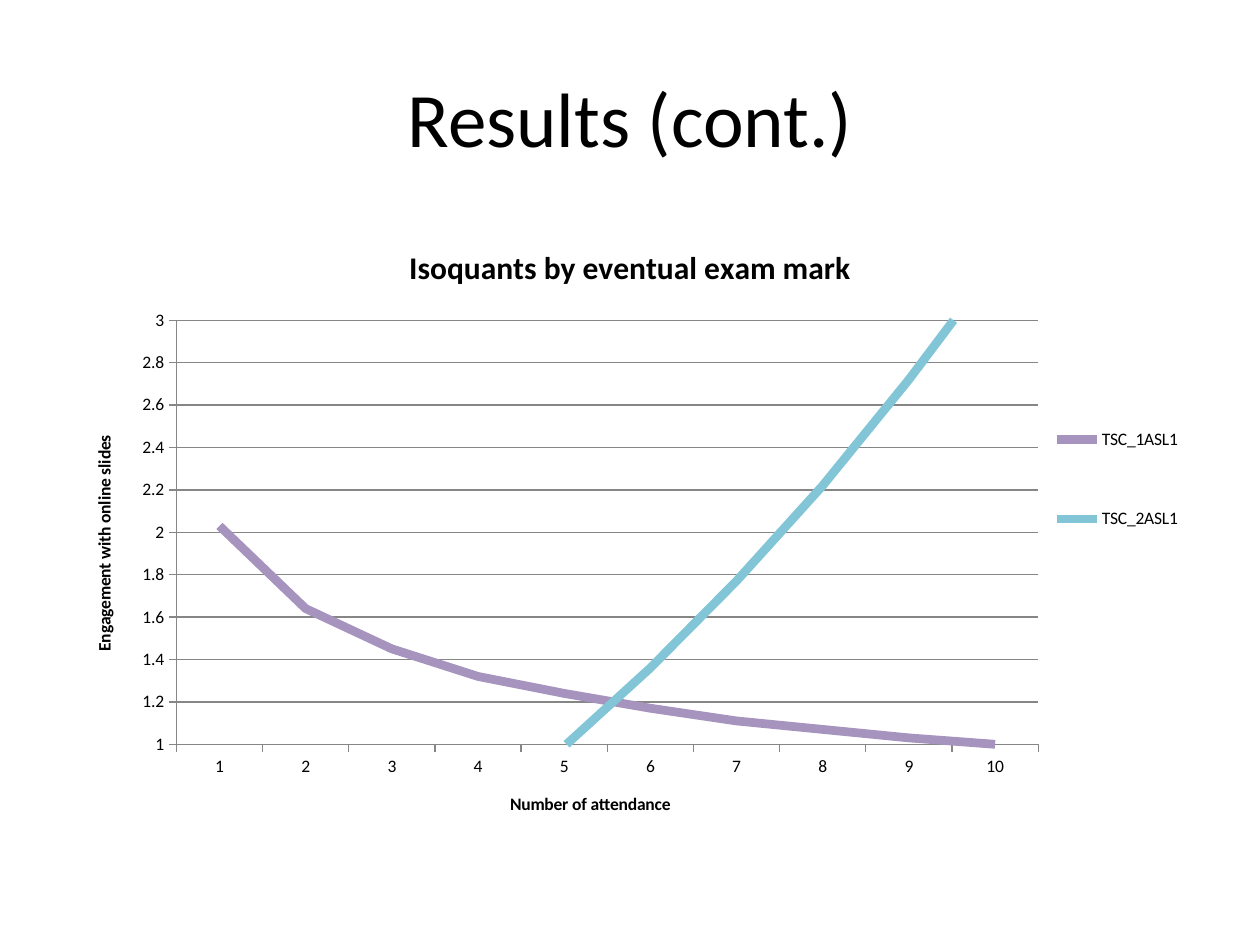
import dataclasses

import pptx
import pptx.chart.data
import pptx.dml.color
import pptx.enum.chart
import pptx.enum.dml
import pptx.enum.text
import pptx.oxml
import pptx.oxml.ns
import pptx.util

Pt = pptx.util.Pt
CHART = pptx.enum.chart
ACCENT = pptx.enum.dml.MSO_THEME_COLOR


@dataclasses.dataclass(frozen=True)
class Theme:
    font: str = "Calibri"
    text: str = "000000"
    axis: str = "868686"
    series: tuple = (ACCENT.ACCENT_4, ACCENT.ACCENT_5)
    series_brightness: float = 0.3
    title_size: int = 44
    chart_title_size: int = 18
    label_size: int = 10
    series_width: float = 5
    axis_width: float = 0.75


THEME = Theme()
SERIES = {
    "TSC_1ASL1": (2.03, 1.64, 1.45, 1.32, 1.24, 1.17, 1.11, 1.07, 1.03, 1),
    "TSC_2ASL1": (0.06, 0.21, 0.41, 0.68, 0.99, 1.36, 1.77, 2.22, 2.72, 3.26),
}


def style_font(font, size, bold=False):
    font.name = THEME.font
    font.size = Pt(size)
    font.bold = bold
    font.color.rgb = pptx.dml.color.RGBColor.from_string(THEME.text)


def style_line(line):
    line.color.rgb = pptx.dml.color.RGBColor.from_string(THEME.axis)
    line.width = Pt(THEME.axis_width)


def set_title(owner, text, size):
    """Give a chart or an axis a bold title."""
    frame = (owner.chart_title if hasattr(owner, "chart_title") else owner.axis_title).text_frame
    frame.text = text
    style_font(frame.paragraphs[0].font, size, bold=True)


def set_layout(element, x, y, w, h, inner=False):
    """Place a plot area or legend by fractions of the chart's box."""
    qn = pptx.oxml.ns.qn
    for old in element.findall(qn("c:layout")):
        element.remove(old)
    target = '<c:layoutTarget val="inner"/>' if inner else ""
    modes = '<c:xMode val="edge"/><c:yMode val="edge"/>'
    sizes = "".join(f'<c:{key} val="{value}"/>' for key, value in zip("xywh", (x, y, w, h)))
    layout = pptx.oxml.parse_xml(
        f'<c:layout {pptx.oxml.ns.nsdecls("c")}><c:manualLayout>'
        f"{target}{modes}{sizes}</c:manualLayout></c:layout>"
    )
    position = element.find(qn("c:legendPos"))
    if position is None:
        element.insert(0, layout)
    else:
        position.addnext(layout)


def place_title(page, left, top, width, height, text):
    box = page.shapes.title
    box.left, box.top, box.width, box.height = map(Pt, (left, top, width, height))
    frame = box.text_frame
    frame.text = text
    frame.vertical_anchor = pptx.enum.text.MSO_ANCHOR.MIDDLE
    para = frame.paragraphs[0]
    para.alignment = pptx.enum.text.PP_ALIGN.CENTER
    style_font(para.font, THEME.title_size)


def style_axis(axis, title):
    set_title(axis, title, THEME.label_size)
    axis.major_tick_mark = CHART.XL_TICK_MARK.OUTSIDE
    axis.minor_tick_mark = CHART.XL_TICK_MARK.NONE
    style_font(axis.tick_labels.font, THEME.label_size)
    style_line(axis.format.line)


def place_chart(page, left, top, width, height):
    data = pptx.chart.data.CategoryChartData()
    data.categories = [str(number) for number in range(1, 11)]
    for name, values in SERIES.items():
        data.add_series(name, values)
    chart = page.shapes.add_chart(
        CHART.XL_CHART_TYPE.LINE, *map(Pt, (left, top, width, height)), data
    ).chart
    style_font(chart.font, THEME.label_size)
    set_title(chart, "Isoquants by eventual exam mark", THEME.chart_title_size)

    style_axis(chart.category_axis, "Number of attendance")
    value_axis = chart.value_axis
    style_axis(value_axis, "Engagement with online slides")
    value_axis.minimum_scale, value_axis.maximum_scale = 1, 3
    value_axis.major_unit = 0.2
    value_axis.tick_labels.number_format = "General"
    value_axis.tick_labels.number_format_is_linked = False
    value_axis.has_major_gridlines = True
    style_line(value_axis.major_gridlines.format.line)

    plot = chart.plots[0]
    plot.vary_by_categories = False
    for series, color in zip(plot.series, THEME.series):
        series.smooth = False
        series.marker.style = CHART.XL_MARKER_STYLE.NONE
        line = series.format.line
        line.color.theme_color = color
        line.color.brightness = THEME.series_brightness
        line.width = Pt(THEME.series_width)

    chart.has_legend = True
    legend = chart.legend
    legend.position = CHART.XL_LEGEND_POSITION.RIGHT
    legend.include_in_layout = False
    style_font(legend.font, THEME.label_size)
    plot_area = chart.element.find(".//" + pptx.oxml.ns.qn("c:plotArea"))
    legend_area = chart.element.find(".//" + pptx.oxml.ns.qn("c:legend"))
    set_layout(plot_area, 0.1, 0.16, 0.76, 0.68, inner=True)
    set_layout(legend_area, 0.87, 0.24, 0.12, 0.35)


def main():
    deck = pptx.Presentation()
    deck.slide_width, deck.slide_height = Pt(720), Pt(540)
    page = deck.slides.add_slide(deck.slide_layouts.get_by_name("Title Only"))
    place_title(page, 36, 21.6, 648, 90, "Results (cont.)")
    place_chart(page, 36, 126, 648, 356.4)
    deck.save("out.pptx")


if __name__ == "__main__":
    main()
